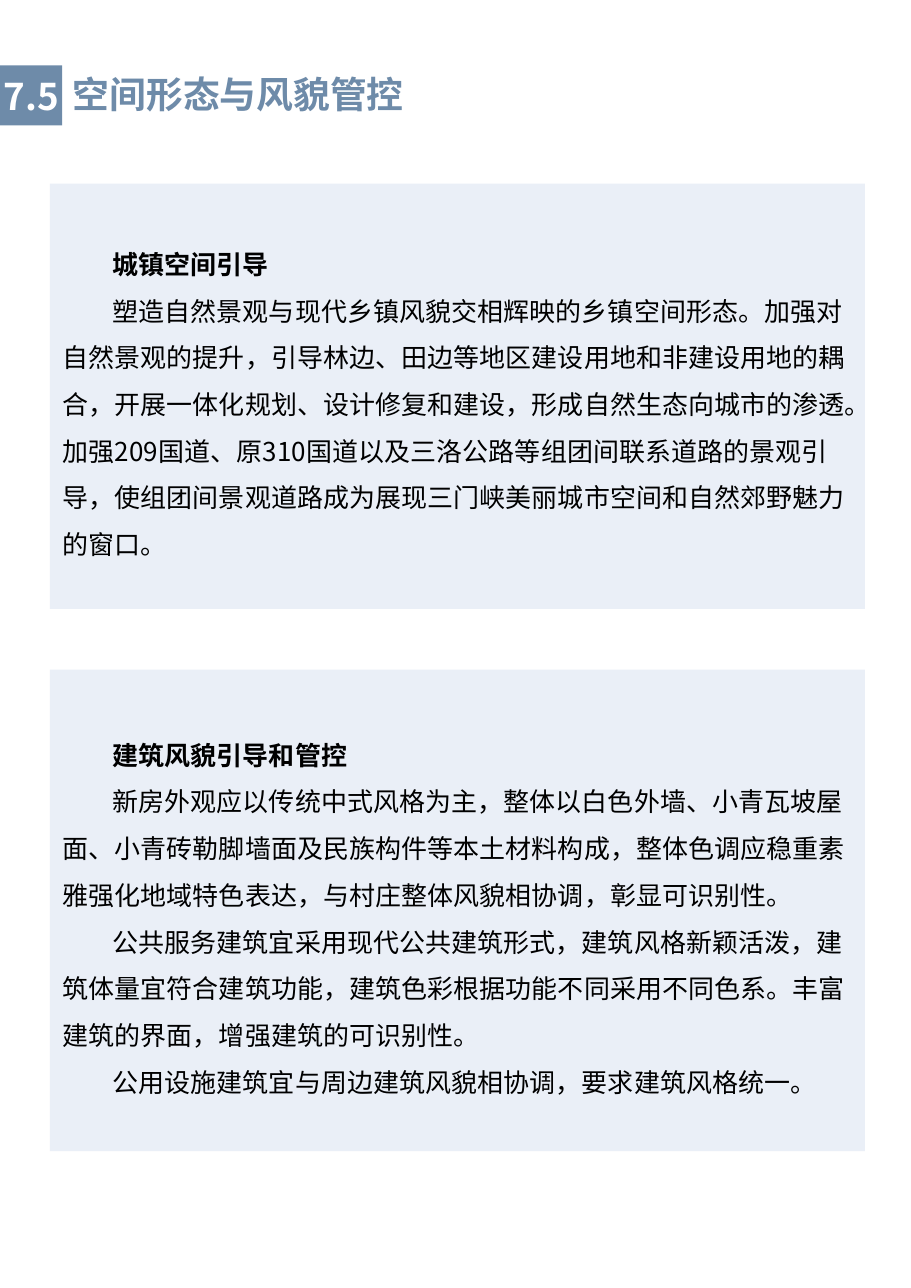
from lxml import etree
from pptx import Presentation
from pptx.dml.color import RGBColor
from pptx.enum.shapes import MSO_SHAPE
from pptx.enum.text import MSO_ANCHOR, PP_ALIGN
from pptx.oxml.ns import qn
from pptx.util import Cm, Pt

RECTANGLE = MSO_SHAPE.RECTANGLE
MIDDLE = MSO_ANCHOR.MIDDLE
LEFT, CENTER = PP_ALIGN.LEFT, PP_ALIGN.CENTER
FONT = "Noto Sans CJK SC"
BLUE, PALE, WHITE, BLACK = "6E8BA9", "EAEFF7", "FFFFFF", "000000"

PANEL_LEFT, PANEL_WIDTH = 1.63, 26.57
PANELS = [
    (5.99, 13.87, "城镇空间引导", [
        "塑造自然景观与现代乡镇风貌交相辉映的乡镇空间形态。加强对自然景观的提升，引导林边、田边等地区建设用地和非建设用地的耦合，开展一体化规划、设计修复和建设，形成自然生态向城市的渗透。加强209国道、原310国道以及三洛公路等组团间联系道路的景观引导，使组团间景观道路成为展现三门峡美丽城市空间和自然郊野魅力的窗口。",
    ]),
    (21.84, 15.7, "建筑风貌引导和管控", [
        "新房外观应以传统中式风格为主，整体以白色外墙、小青瓦坡屋面、小青砖勒脚墙面及民族构件等本土材料构成，整体色调应稳重素雅强化地域特色表达，与村庄整体风貌相协调，彰显可识别性。",
        "公共服务建筑宜采用现代公共建筑形式，建筑风格新颖活泼，建筑体量宜符合建筑功能，建筑色彩根据功能不同采用不同色系。丰富建筑的界面，增强建筑的可识别性。",
        "公用设施建筑宜与周边建筑风貌相协调，要求建筑风格统一。",
    ]),
]


def color(value):
    """Return the colour for a hex string."""
    return RGBColor.from_string(value)


def style(para, size, tint, bold, align=LEFT):
    """Set alignment and the Latin and East Asian font of a paragraph."""
    para.alignment = align
    para.font.name = FONT
    para.font.size = Pt(size)
    para.font.bold = bold
    para.font.color.rgb = color(tint)
    properties = para._p.pPr.find(qn("a:defRPr"))
    etree.SubElement(properties, qn("a:ea")).set("typeface", FONT)
    return properties


def prepare(frame, inset, wrap=True):
    """Centre the text vertically and set the side margins."""
    frame.word_wrap = wrap
    frame.vertical_anchor = MIDDLE
    frame.margin_left = frame.margin_right = Cm(inset)
    frame.margin_top = frame.margin_bottom = 0


def add_block(page, left, top, width, height, fill):
    """Add a plain filled rectangle."""
    box = page.shapes.add_shape(RECTANGLE, Cm(left), Cm(top), Cm(width), Cm(height))
    box.shadow.inherit = False
    box.fill.solid()
    box.fill.fore_color.rgb = color(fill)
    box.line.fill.background()
    return box


def add_heading(page, left, top, number, title):
    """Add the numbered badge and the title beside it."""
    badge_width, badge_height = 2.03, 1.96
    badge = add_block(page, left, top, badge_width, badge_height, BLUE)
    prepare(badge.text_frame, 0, wrap=False)
    para = badge.text_frame.paragraphs[0]
    para.text = number
    style(para, 34, WHITE, True, CENTER)

    box = page.shapes.add_textbox(Cm(left + badge_width + 0.1), Cm(top + 0.08), Cm(22.33), Cm(1.7))
    prepare(box.text_frame, 0.25)
    para = box.text_frame.paragraphs[0]
    para.text = title
    style(para, 34, BLUE, True)


def add_panel(page, left, top, width, height, heading, body):
    """Add a tinted panel with a bold heading over body paragraphs."""
    frame = add_block(page, left, top, width, height, PALE).text_frame
    prepare(frame, 0.41)
    for index, text in enumerate([heading, *body]):
        para = frame.add_paragraph() if index else frame.paragraphs[0]
        para.text = text
        para.line_spacing = Pt(43.2)
        properties = style(para, 24, BLACK, index == 0)
        properties.set("spc", "10")
        para._p.pPr.set("indent", str(Cm(1.63)))


def main():
    """Build the page and save it."""
    deck = Presentation()
    deck.slide_width, deck.slide_height = Cm(29.7), Cm(42)
    page = deck.slides.add_slide(deck.slide_layouts[6])
    add_heading(page, 0, 2.13, "7.5", "空间形态与风貌管控")
    for top, height, heading, body in PANELS:
        add_panel(page, PANEL_LEFT, top, PANEL_WIDTH, height, heading, body)
    deck.save("out.pptx")


if __name__ == "__main__":
    main()
